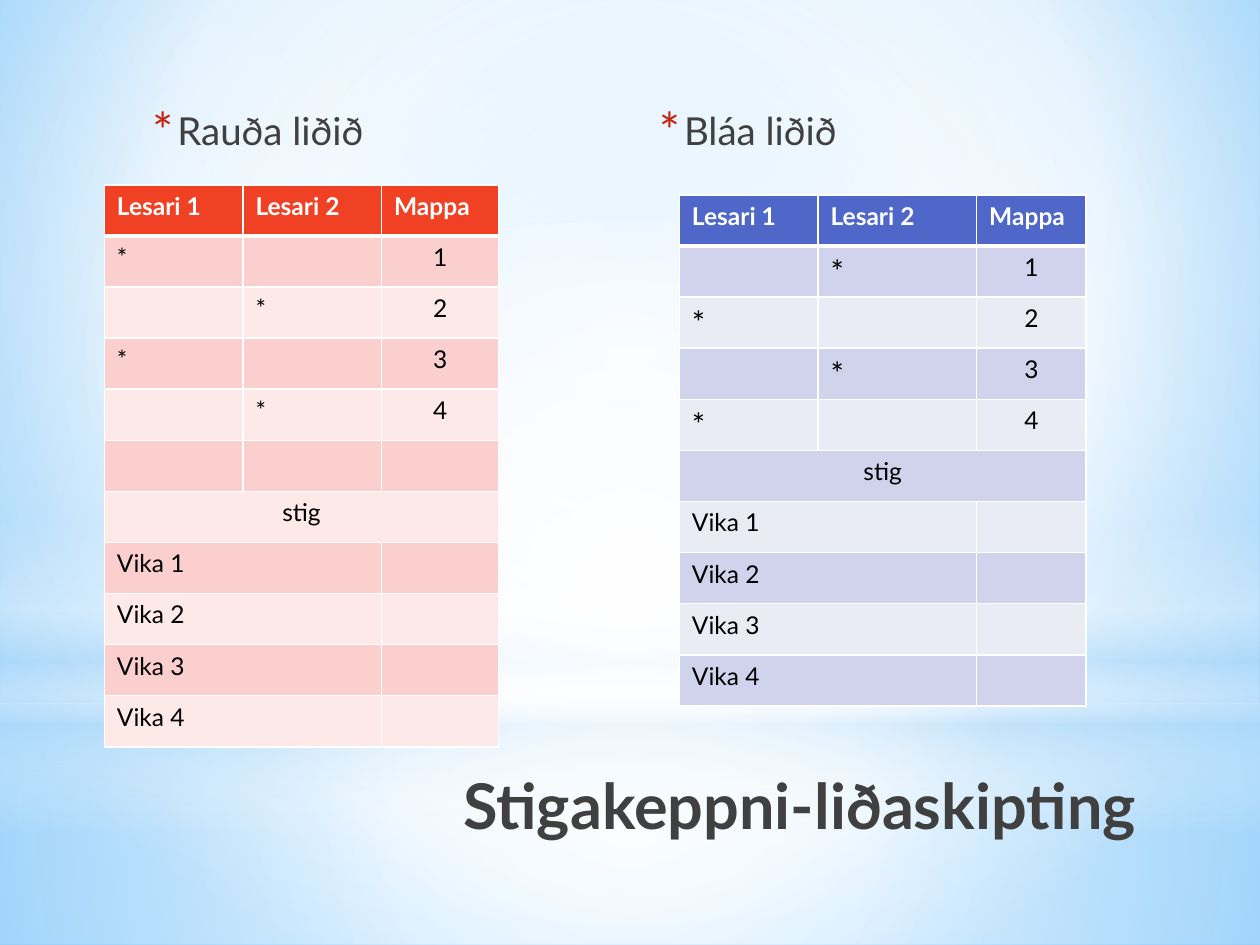
from dataclasses import dataclass
from typing import Optional

from lxml.etree import SubElement
from pptx import Presentation
from pptx.dml.color import RGBColor
from pptx.enum.shapes import MSO_SHAPE as Shape
from pptx.enum.text import MSO_ANCHOR as Anchor, MSO_AUTO_SIZE as AutoSize, PP_ALIGN as Align
from pptx.oxml.ns import qn
from pptx.util import Pt

FONT = "Lato"
DARK, WHITE, BLACK = "404040", "FFFFFF", "000000"
ROW_HEIGHT = 29.2
WEEKS = 4


@dataclass
class Gradient:
    stops: list[tuple]
    center: Optional[tuple] = (50, 50, 50, 50)


@dataclass
class Glow:
    kind: Shape
    top: float
    height: float
    gradient: Gradient


@dataclass
class Team:
    name: str
    heading_box: tuple
    left: float
    top: float
    widths: tuple
    header: str
    bands: tuple
    star_size: int
    first_reader: int
    spacer_rows: int


BACKGROUND = Gradient([(0, "9ED5FF", 100), (60, WHITE, 100), (100, "5BB9FF", 100)], (20, 10, 20, 60))
GLOWS = [
    Glow(Shape.RECTANGLE, 401.8, 138.2, Gradient([(0, WHITE, 91), (37, WHITE, 76), (100, "B4DCFA", 79)])),
    Glow(Shape.RECTANGLE, 0, 401.8, Gradient([(0, WHITE, 89), (48, WHITE, 62), (100, "B4DCFA", 79)])),
    Glow(Shape.RECTANGLE, 296.6, 180, Gradient(
        [(0, WHITE, 0), (29, WHITE, 30), (45, "B4DCFA", 40),
         (55, WHITE, 26), (65, "B4DCFA", 60), (100, WHITE, 0)], None)),
    Glow(Shape.OVAL, 126, 401.8, Gradient([(0, WHITE, 100), (56, WHITE, 0)])),
]
TEAMS = [
    Team("Rauða liðið", (76.3, 57.6, 145.4, 48.2), 59.6, 105.6, (79.2, 79.2, 67),
         "F14124", ("FACFCD", "FCE9E8"), 14, 0, 1),
    Team("Bláa liðið", (365.8, 57.6, 263.5, 273.6), 388.2, 111.4, (79.2, 90.7, 62.6),
         "4E67C8", ("D0D3EB", "E9EBF5"), 18, 1, 0),
]


def rgb(color: str) -> RGBColor:
    return RGBColor.from_string(color)


def apply_gradient(fill, element, gradient: Gradient) -> None:
    fill.solid()
    solid = element.find(".//" + qn("a:solidFill"))
    grad = SubElement(solid.getparent(), qn("a:gradFill"), rotWithShape="1")
    solid.getparent().replace(solid, grad)
    stops = SubElement(grad, qn("a:gsLst"))
    for position, color, alpha in gradient.stops:
        stop = SubElement(stops, qn("a:gs"), pos=str(position * 1000))
        clr = SubElement(stop, qn("a:srgbClr"), val=color)
        if alpha < 100:
            SubElement(clr, qn("a:alpha"), val=str(alpha * 1000))
    if gradient.center:
        shade = SubElement(grad, qn("a:path"))
        shade.set("path", "circle")
        rect = SubElement(shade, qn("a:fillToRect"))
        for side, value in zip("ltrb", gradient.center):
            rect.set(side, str(value * 1000))
    else:
        SubElement(grad, qn("a:lin"), ang="5400000", scaled="0")


def add_run(p, text: str, size: float, color: str, bold: bool = False) -> None:
    r = p.add_run()
    r.text = text
    r.font.name = FONT
    r.font.size = Pt(size)
    r.font.bold = bold
    r.font.color.rgb = rgb(color)


def add_glow(s, glow: Glow) -> None:
    sp = s.shapes.add_shape(glow.kind, 0, Pt(glow.top), Pt(720), Pt(glow.height))
    sp.shadow.inherit = False
    sp.line.fill.background()
    apply_gradient(sp.fill, sp.element, glow.gradient)


def add_title(s, text: str) -> None:
    sp = s.shapes.title
    sp.left, sp.top, sp.width, sp.height = Pt(206.6), Pt(434.2), Pt(458.6), Pt(90)
    sp.element.getparent().append(sp.element)
    tf = sp.text_frame
    tf.word_wrap = True
    tf.auto_size = AutoSize.NONE
    tf.vertical_anchor = Anchor.TOP
    p = tf.paragraphs[0]
    p.alignment = Align.RIGHT
    add_run(p, text, 36, DARK, True)


def add_heading(s, team: Team) -> None:
    tf = s.shapes.add_textbox(*map(Pt, team.heading_box)).text_frame
    tf.word_wrap = True
    p = tf.paragraphs[0]
    p.space_before, p.space_after = Pt(4.4), Pt(3)
    pPr = p._p.get_or_add_pPr()
    pPr.set("marL", str(Pt(18)))
    pPr.set("indent", str(-Pt(14.4)))
    SubElement(SubElement(pPr, qn("a:buClr")), qn("a:srgbClr"), val="C3260C")
    SubElement(pPr, qn("a:buSzPct"), val="130000")
    SubElement(pPr, qn("a:buFont"), typeface=FONT)
    SubElement(pPr, qn("a:buChar"), char="*")
    add_run(p, team.name, 22, DARK)


def set_borders(cell, top: float, bottom: float) -> None:
    tcPr = cell._tc.get_or_add_tcPr()
    for side, width in (("L", 1), ("R", 1), ("T", top), ("B", bottom)):
        ln = SubElement(tcPr, qn("a:ln" + side), w=str(Pt(width)))
        SubElement(SubElement(ln, qn("a:solidFill")), qn("a:srgbClr"), val=WHITE)


def table_rows(team: Team) -> list[list[str]]:
    rows = [["Lesari 1", "Lesari 2", "Mappa"]]
    for i in range(WEEKS):
        row = ["", "", str(i + 1)]
        row[(i + team.first_reader) % 2] = "*"
        rows.append(row)
    rows += [["", "", ""]] * team.spacer_rows
    rows.append(["stig", "", ""])
    return rows + [[f"Vika {i + 1}", "", ""] for i in range(WEEKS)]


def add_team_table(s, team: Team) -> None:
    rows = table_rows(team)
    table = s.shapes.add_table(len(rows), 3, Pt(team.left), Pt(team.top),
                               Pt(sum(team.widths)), Pt(ROW_HEIGHT * len(rows))).table
    for column, width in zip(table.columns, team.widths):
        column.width = Pt(width)
    for i, row in enumerate(rows):
        table.rows[i].height = Pt(ROW_HEIGHT)
        for j, text in enumerate(row):
            cell = table.cell(i, j)
            set_borders(cell, 3 if i == 1 else 1, 3 if i == 0 else 1)
            cell.fill.solid()
            cell.fill.fore_color.rgb = rgb(team.bands[(i - 1) % 2] if i else team.header)
            if text:
                p = cell.text_frame.paragraphs[0]
                if text == "stig" or text.isdigit():
                    p.alignment = Align.CENTER
                add_run(p, text, team.star_size if text == "*" else 14,
                        BLACK if i else WHITE, i == 0)
        if row[0] == "stig":
            table.cell(i, 0).merge(table.cell(i, 2))
        elif row[0].startswith("Vika"):
            table.cell(i, 0).merge(table.cell(i, 1))


def main() -> None:
    prs = Presentation()
    prs.slide_width, prs.slide_height = Pt(720), Pt(540)
    s = prs.slides.add_slide(prs.slide_layouts[5])
    apply_gradient(s.background.fill, s.element, BACKGROUND)
    for glow in GLOWS:
        add_glow(s, glow)
    add_title(s, "Stigakeppni-liðaskipting ")
    for team in TEAMS:
        add_heading(s, team)
    for team in TEAMS:
        add_team_table(s, team)
    prs.save("out.pptx")


if __name__ == "__main__":
    main()
